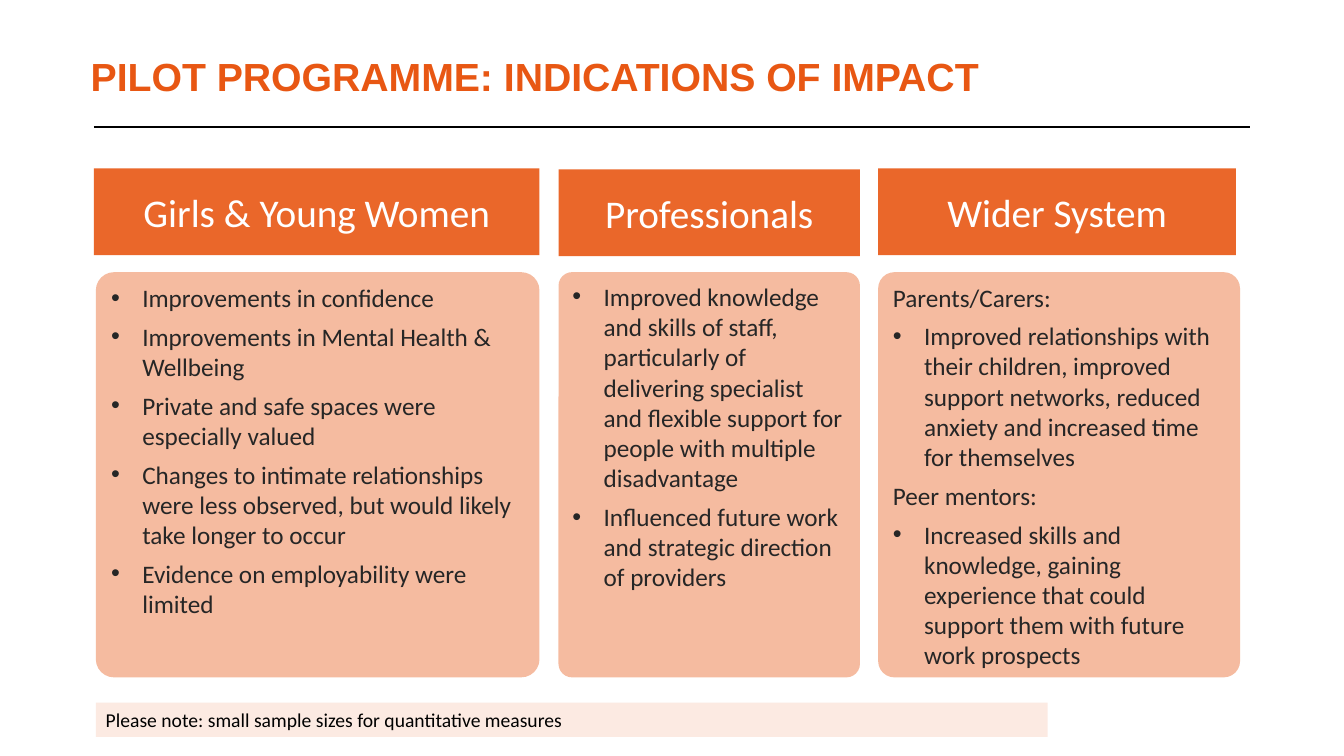
from dataclasses import dataclass

from lxml import etree
from pptx import Presentation
from pptx import util as u
from pptx.dml import color as col
from pptx.enum import shapes, text
from pptx.oxml import ns

WIDE, HIGH = u.Inches(13.33), u.Inches(7.5)
INK = {"brand": "E85713", "body": "262626", "white": "FFFFFF", "black": "000000"}
HEAD_H, BODY_Y, BODY_H = 11.47, 36, 53.6
ROUND = 0.045
HANG = u.Inches(0.31)


@dataclass
class Box:
    """Left, top, width and height as percentages of the slide."""
    x: float
    y: float
    w: float
    h: float

    def place(self) -> tuple:
        return (across(self.x), down(self.y), across(self.w), down(self.h))


@dataclass
class Group:
    name: str
    head: Box
    body: Box
    lines: list  # (text, has bullet)


GROUPS = [
    Group("Girls & Young Women",
          Box(6.98, 22.27, 33.16, HEAD_H), Box(7.13, BODY_Y, 33.01, BODY_H), [
              ("Improvements in confidence", True),
              ("Improvements in Mental Health & Wellbeing", True),
              ("Private and safe spaces were especially valued", True),
              ("Changes to intimate relationships were less observed, "
               "but would likely take longer to occur", True),
              ("Evidence on employability were limited", True)]),
    Group("Professionals",
          Box(41.56, 22.4, 22.43, HEAD_H), Box(41.56, BODY_Y, 22.43, BODY_H), [
              ("Improved knowledge and skills of staff, particularly of delivering "
               "specialist and flexible support for people with multiple "
               "disadvantage", True),
              ("Influenced future work and strategic direction of providers", True)]),
    Group("Wider System",
          Box(65.34, 22.27, 26.63, HEAD_H), Box(65.34, BODY_Y, 26.93, BODY_H), [
              ("Parents/Carers:", False),
              ("Improved relationships with their children, improved support "
               "networks, reduced anxiety and increased time for themselves", True),
              ("Peer mentors:", False),
              ("Increased skills and knowledge, gaining experience that could "
               "support them with future work prospects", True)]),
]


def across(share: float) -> int:
    return round(WIDE * share / 100)


def down(share: float) -> int:
    return round(HIGH * share / 100)


def paint(name: str) -> col.RGBColor:
    return col.RGBColor.from_string(INK[name])


def write(shape, lines: list, *, size: float, ink: str, font: str = "Calibri",
          bold: bool = False, align=text.PP_ALIGN.LEFT,
          anchor=text.MSO_ANCHOR.TOP, after: float = 0, lead: float = 1.0) -> None:
    """Fill a shape with (text, has bullet) lines in one format."""
    frame = shape.text_frame
    frame.word_wrap = True
    frame.auto_size = text.MSO_AUTO_SIZE.NONE
    frame.vertical_anchor = anchor
    for i, (words, dot) in enumerate(lines):
        para = frame.add_paragraph() if i else frame.paragraphs[0]
        para.alignment = align
        para.space_before, para.space_after = u.Pt(0), u.Pt(after)
        para.line_spacing = lead
        if dot:
            props = para._p.get_or_add_pPr()
            props.set("marL", str(HANG))
            props.set("indent", str(-HANG))
            etree.SubElement(props, ns.qn("a:buFont"), typeface="Arial")
            etree.SubElement(props, ns.qn("a:buChar"), char="•")
        run = para.add_run()
        run.text = words
        run.font.name, run.font.size, run.font.bold = font, u.Pt(size), bold
        run.font.color.rgb = paint(ink)


def panel(slide, box: Box, alpha: int, kind=shapes.MSO_SHAPE.RECTANGLE):
    """Add a borderless brand-coloured shape, alpha percent opaque."""
    shape = slide.shapes.add_shape(kind, *box.place())
    shape.shadow.inherit = False
    shape.line.fill.background()
    shape.fill.solid()
    shape.fill.fore_color.rgb = paint("brand")
    tint = shape.fill._xPr.find(".//" + ns.qn("a:srgbClr"))
    etree.SubElement(tint, ns.qn("a:alpha"), val=str(alpha * 1000))
    return shape


def title(slide) -> None:
    shape = slide.shapes.title
    shape.left, shape.top, shape.width, shape.height = Box(6.75, 7.07, 87.17, 10.93).place()
    frame = shape.text_frame
    frame.margin_left = 0
    frame.margin_top = frame.margin_right = frame.margin_bottom = u.Inches(0.04)
    write(shape, [("PILOT PROGRAMME: INDICATIONS OF IMPACT", False)],
          size=28, ink="brand", font="Arial", bold=True, lead=0.9)


def rule(slide) -> None:
    line = slide.shapes.add_connector(shapes.MSO_CONNECTOR.STRAIGHT, across(6.98),
                                      down(16.8), across(93.02), down(16.8))
    line.line.color.rgb = paint("black")
    line.line.width = u.Pt(1)
    etree.SubElement(line._element.spPr, ns.qn("a:effectLst"))


def column(slide, group: Group) -> None:
    head = panel(slide, group.head, 90)
    write(head, [(group.name, False)], size=28, ink="white",
          align=text.PP_ALIGN.CENTER, anchor=text.MSO_ANCHOR.MIDDLE)
    body = panel(slide, group.body, 40, shapes.MSO_SHAPE.ROUNDED_RECTANGLE)
    body.adjustments[0] = ROUND
    write(body, group.lines, size=18, ink="body", after=6)


def main() -> None:
    deck = Presentation()
    deck.slide_width, deck.slide_height = WIDE, HIGH
    slide = deck.slides.add_slide(deck.slide_layouts[5])
    title(slide)
    rule(slide)
    for group in GROUPS:
        column(slide, group)
    note = panel(slide, Box(7.13, 92.93, 70.82, 4.53), 12)
    write(note, [("Please note: small sample sizes for quantitative measures", False)],
          size=14, ink="black")
    deck.save("out.pptx")


if __name__ == "__main__":
    main()
